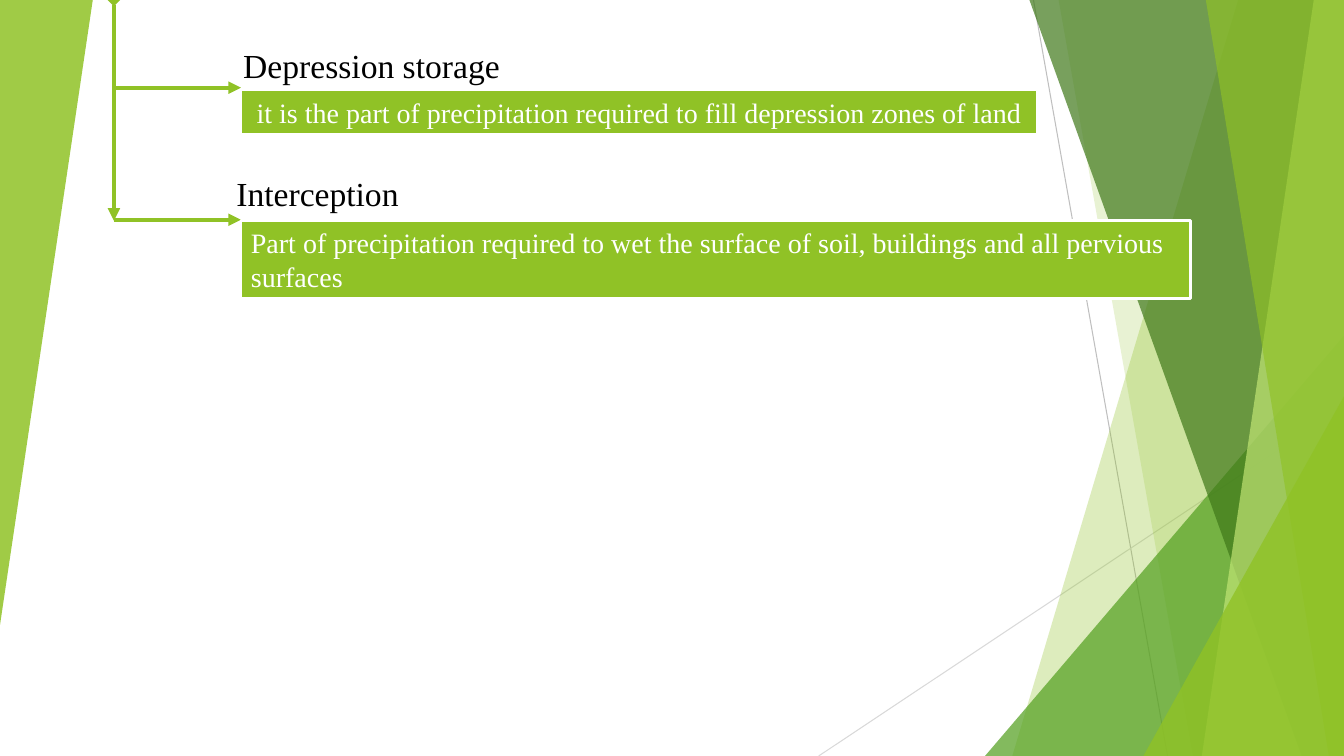
from lxml import etree
from pptx import Presentation, util as u
from pptx.dml.color import RGBColor
from pptx.enum import shapes, text
from pptx.oxml.ns import qn

COLORS = {
    "lime": "90C226", "green": "54A021", "forest": "3F7819", "pale": "C0E474",
    "grey": "BFBFBF", "light_grey": "D9D9D9", "white": "FFFFFF", "black": "000000",
}
FONT = "Times New Roman"
WIDTH, HEIGHT = 13.33, 7.5
TRUNK_X, BOX_X = 1.13, 2.39


def rgb(name):
    """Return the named colour."""
    return RGBColor.from_string(COLORS[name])


def paint(sp, color, opacity):
    """Give a decorative shape a translucent fill without outline or shadow."""
    sp.shadow.inherit = False
    sp.fill.solid()
    sp.fill.fore_color.rgb = rgb(color)
    clr = sp._element.spPr.find(qn("a:solidFill")).find(qn("a:srgbClr"))
    etree.SubElement(clr, qn("a:alpha")).set("val", str(opacity * 1000))
    sp.line.fill.background()


def add_band(s, top_left, top_right, bottom_right, bottom_left, color, opacity):
    """Draw a slanted band over the full slide height."""
    points = [(top_left, 0), (top_right, 0), (bottom_right, HEIGHT), (bottom_left, HEIGHT)]
    corners = [(u.Inches(x), u.Inches(y)) for x, y in points]
    builder = s.shapes.build_freeform(*corners[0])
    builder.add_line_segments(corners[1:], close=True)
    paint(builder.convert_to_shape(), color, opacity)


def add_corner(s, x, y, w, h, color, opacity, rotation=0):
    """Draw a right-angled triangle in a corner of the slide."""
    sp = s.shapes.add_shape(shapes.MSO_SHAPE.ISOSCELES_TRIANGLE,
                            *map(u.Inches, (x, y, w, h)))
    sp.adjustments[0] = 1
    sp.rotation = rotation
    paint(sp, color, opacity)


def add_line(s, x1, y1, x2, y2, color, width, head=None, tail=None):
    """Draw a straight line with optional ends."""
    line = s.shapes.add_connector(shapes.MSO_CONNECTOR.STRAIGHT,
                                  *map(u.Inches, (x1, y1, x2, y2)))
    line.line.color.rgb = rgb(color)
    line.line.width = u.Pt(width)
    ln = line.line._get_or_add_ln()
    for tag, kind in (("a:headEnd", head), ("a:tailEnd", tail)):
        if kind:
            etree.SubElement(ln, qn(tag)).set("type", kind)
    etree.SubElement(line._element.spPr, qn("a:effectLst"))


def write(sp, words, size, color, align):
    """Write one paragraph into a shape."""
    tf = sp.text_frame
    tf.word_wrap = True
    p = tf.paragraphs[0]
    p.alignment = align
    r = p.add_run()
    r.text = words
    r.font.name = FONT
    r.font.size = u.Pt(size)
    r.font.color.rgb = rgb(color)


def add_heading(s, x, y, w, words):
    """Add the heading of a term."""
    sp = s.shapes.add_textbox(*map(u.Inches, (x, y, w, 0.5)))
    write(sp, words, 24, "black", text.PP_ALIGN.CENTER)


def add_definition(s, y, w, h, words, align):
    """Add the filled box that defines a term."""
    sp = s.shapes.add_shape(shapes.MSO_SHAPE.RECTANGLE,
                            *map(u.Inches, (BOX_X, y, w, h)))
    sp.shadow.inherit = False
    sp.fill.solid()
    sp.fill.fore_color.rgb = rgb("lime")
    sp.line.color.rgb = rgb("white")
    sp.line.width = u.Pt(2)
    sp.text_frame.vertical_anchor = text.MSO_ANCHOR.MIDDLE
    write(sp, words, 20, "white", align)


def add_branch(s, y):
    """Draw an arrow from the trunk to a definition."""
    add_line(s, TRUNK_X, y, BOX_X, y, "lime", 3, tail="triangle")


def add_backdrop(s):
    """Draw the translucent green facets and thin lines."""
    add_line(s, 10.25, 0, 11.58, HEIGHT, "grey", 0.75)
    add_line(s, WIDTH, 4.03, 8.12, HEIGHT, "light_grey", 0.75)
    add_band(s, 12.28, WIDTH, WIDTH, 10.04, "lime", 30)
    add_band(s, 10.5, WIDTH, WIDTH, 11.83, "lime", 20)
    add_corner(s, 9.77, 3.33, 3.56, 4.17, "green", 72)
    add_band(s, 10.21, WIDTH, WIDTH, 12.91, "forest", 70)
    add_band(s, 13.03, WIDTH, WIDTH, 11.92, "pale", 70)
    add_band(s, 11.96, WIDTH, WIDTH, 13.18, "lime", 65)
    add_corner(s, 11.34, 3.93, 1.99, 3.57, "lime", 80)
    add_corner(s, 0, 0, 0.92, 6.2, "lime", 85, rotation=180)


def main():
    """Build the slide and save it."""
    prs = Presentation()
    prs.slide_width, prs.slide_height = u.Inches(WIDTH), u.Inches(HEIGHT)
    s = prs.slides.add_slide(prs.slide_layouts[6])
    add_backdrop(s)

    add_heading(s, 2.18, 1.67, 1.94, "Interception")
    add_line(s, TRUNK_X, 0, TRUNK_X, 2.19, "lime", 3, head="diamond", tail="triangle")
    add_branch(s, 2.18)
    add_definition(s, 2.19, 9.42, 0.77,
                   "Part of precipitation required to wet the surface of soil, "
                   "buildings and all pervious surfaces", text.PP_ALIGN.LEFT)

    add_heading(s, 2.08, 0.4, 3.21, "Depression storage")
    add_branch(s, 0.87)
    add_definition(s, 0.89, 7.9, 0.44,
                   "it is the part of precipitation required to fill "
                   "depression zones of land", text.PP_ALIGN.CENTER)
    prs.save("out.pptx")


if __name__ == "__main__":
    main()
